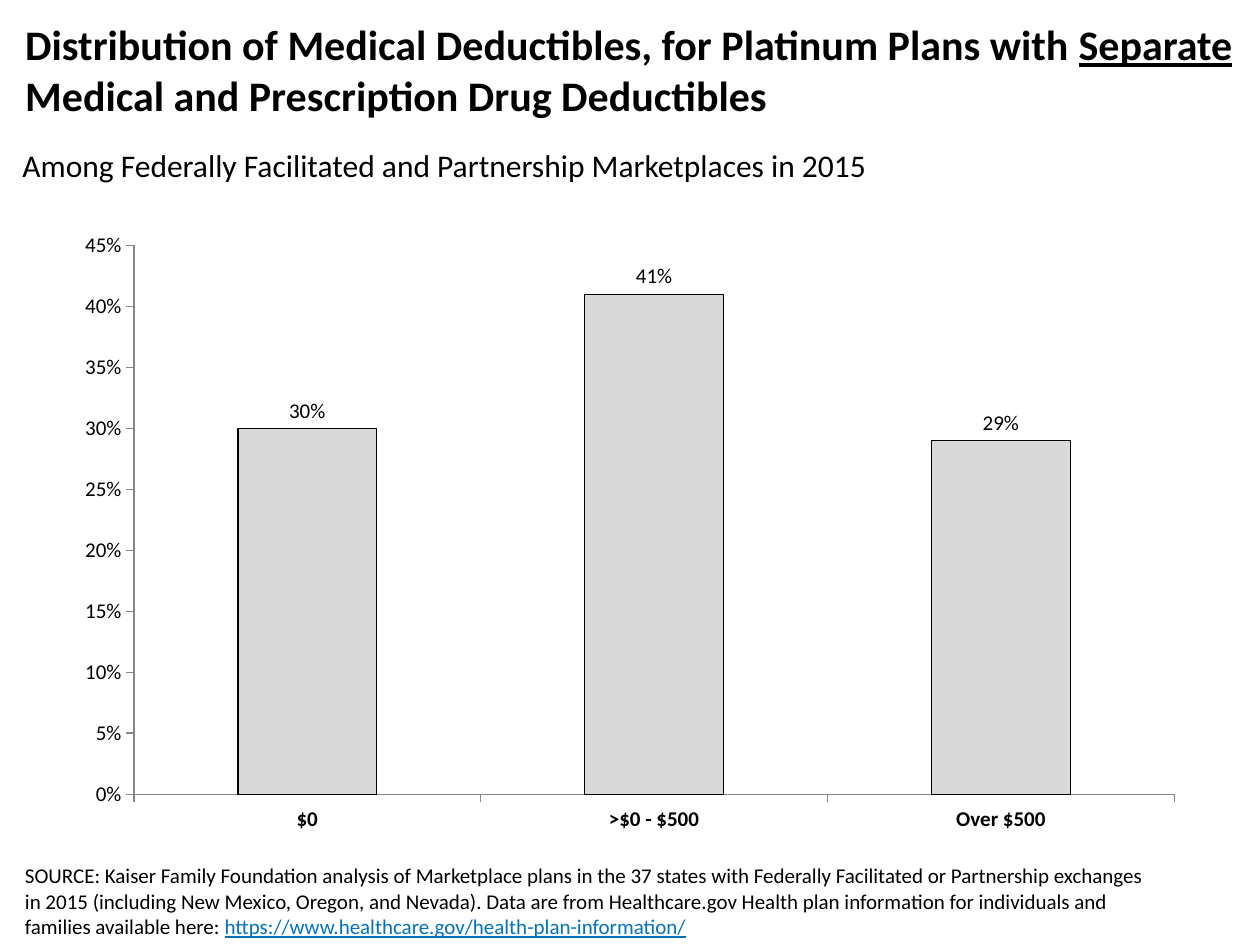
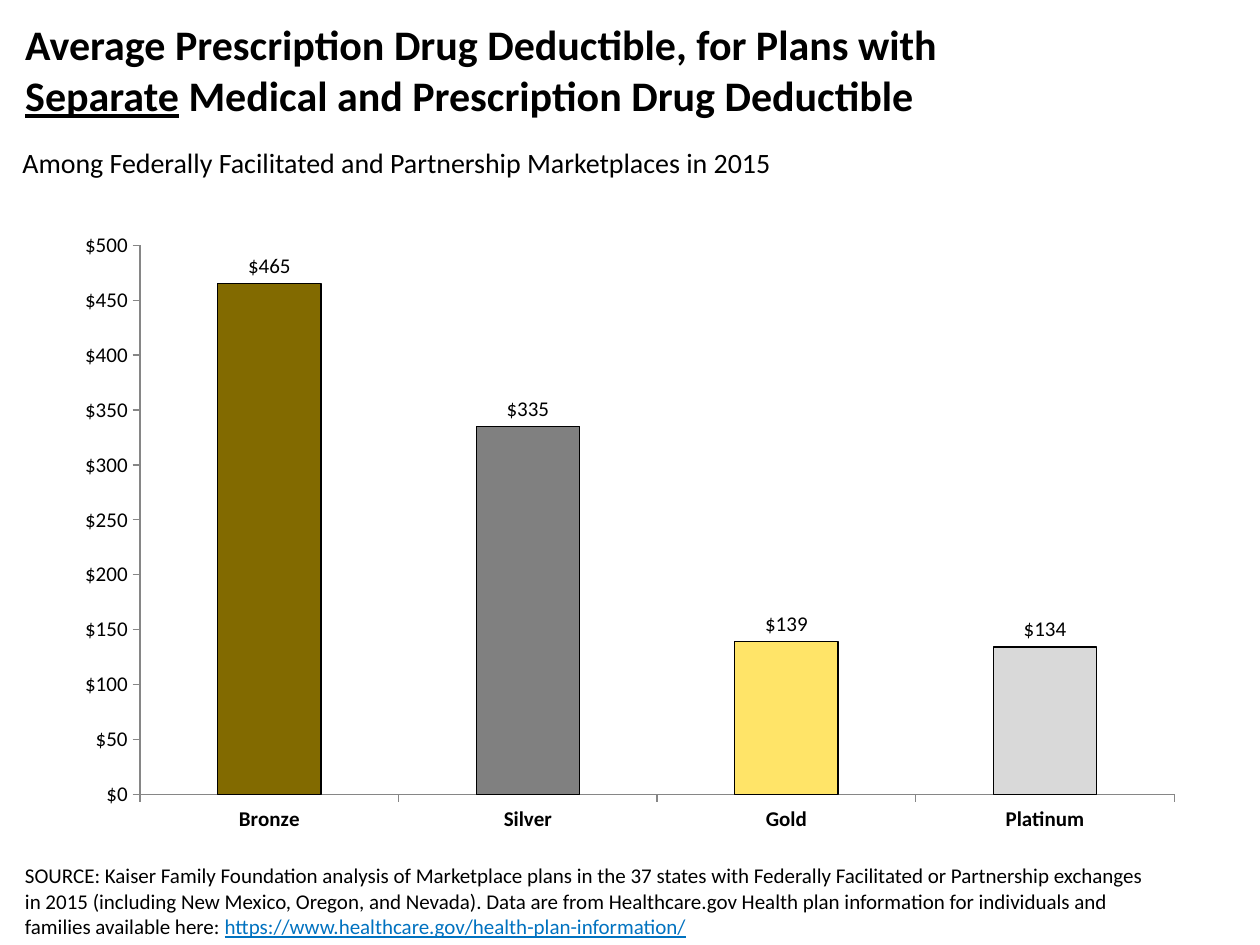
"""Build two slides of column charts on health plan deductibles."""
from dataclasses import dataclass

import pptx
import pptx.chart.data
import pptx.dml.color
import pptx.enum.chart
import pptx.enum.text
import pptx.oxml
import pptx.oxml.ns
import pptx.util

SUBTITLE = "Among Federally Facilitated and Partnership Marketplaces in 2015"
SOURCE = [
    ("SOURCE: Kaiser Family Foundation analysis of Marketplace plans in the 37 states with "
     "Federally Facilitated or Partnership exchanges in 2015 (including New Mexico, Oregon, "
     "and Nevada). Data are from Healthcare.gov Health plan information for individuals and "
     "families available here: ", False),
    ("https://www.healthcare.gov/health-plan-information/", True),
]
PAGES = [
    {
        "title": [("Distribution of Medical Deductibles, for Platinum Plans with ", False),
                  ("Separate", True),
                  (" Medical and Prescription Drug Deductibles", False)],
        "subtitle_size": 18,
        "bars": [("$0", 0.30, "D9D9D9"), (">$0 - $500", 0.41, "D9D9D9"),
                 ("Over $500", 0.29, "D9D9D9")],
        "number_format": "0%",
        "top": 0.45,
        "step": 0.05,
        "plot_left": 0.0625,
    },
    {
        "title": [("Average Prescription Drug Deductible, for Plans with\v", False),
                  ("Separate", True),
                  (" Medical and Prescription Drug Deductible", False)],
        "subtitle_size": 16,
        "bars": [("Bronze", 465, "826A00"), ("Silver", 335, "808080"),
                 ("Gold", 139, "FFE468"), ("Platinum", 134, "D9D9D9")],
        "number_format": '"$"#,##0',
        "top": 500,
        "step": 50,
        "plot_left": 0.068,
    },
]

COLUMNS, ROWS = 100, 75
TITLE_AREA = (1, 1, 98, 10)
SUBTITLE_AREA = (0.8, 11.1, 80, 4)
CHART_AREA = (5, 17.5, 90, 49.5)
SOURCE_AREA = (1, 68, 91, 6)
PLOT_RIGHT, PLOT_TOP, PLOT_HEIGHT = 0.98, 0.04, 0.88


@dataclass(frozen=True)
class Theme:
    """Hold the colours and type sizes of the slides."""
    font: str = "Calibri"
    ink: str = "000000"
    link: str = "0072C0"
    axis: str = "868686"
    title: int = 24
    small: int = 12
    outline: float = 0.75


THEME = Theme()
deck = pptx.Presentation()
deck.slide_width, deck.slide_height = pptx.util.Inches(10), pptx.util.Inches(7.5)


def place(area):
    """Turn grid columns and rows into slide lengths."""
    column, row = deck.slide_width / COLUMNS, deck.slide_height / ROWS
    return [round(count * unit) for count, unit in zip(area, (column, row, column, row))]


def rgb(colour):
    """Return a colour object for a hex string."""
    return pptx.dml.color.RGBColor.from_string(colour)


def style(font, size, colour=THEME.ink, bold=False):
    """Apply the shared typeface with a size, colour and weight."""
    font.name, font.size, font.bold = THEME.font, pptx.util.Pt(size), bold
    font.color.rgb = rgb(colour)


def write(holder, area, pieces, size, bold=False, marked=THEME.ink):
    """Place a text holder and fill it with plain and underlined pieces."""
    holder.left, holder.top, holder.width, holder.height = place(area)
    frame = holder.text_frame
    frame.word_wrap = True
    frame.auto_size = pptx.enum.text.MSO_AUTO_SIZE.NONE
    frame.vertical_anchor = pptx.enum.text.MSO_ANCHOR.TOP
    paragraph = frame.paragraphs[0]
    paragraph.alignment = pptx.enum.text.PP_ALIGN.LEFT
    paragraph.text = pieces[0][0]
    for words, _ in pieces[1:]:
        paragraph.add_run().text = words
    for run, (_, underlined) in zip(paragraph.runs, pieces):
        style(run.font, size, marked if underlined else THEME.ink, bold)
        run.font.underline = underlined
    paragraph.font.size = pptx.util.Pt(size)


def fix_plot(chart, left):
    """Pin the inner plot area to shares of the chart."""
    plot_area = chart.plots[0]._element.getparent()
    for old in plot_area.findall(pptx.oxml.ns.qn("c:layout")):
        plot_area.remove(old)
    shares = {"x": left, "y": PLOT_TOP, "w": PLOT_RIGHT - left, "h": PLOT_HEIGHT}
    modes = "".join(f'<c:{key}Mode val="edge"/>' for key in "xy")
    sizes = "".join(f'<c:{key} val="{share:.4f}"/>' for key, share in shares.items())
    plot_area.insert(0, pptx.oxml.parse_xml(
        f'<c:layout {pptx.oxml.ns.nsdecls("c")}><c:manualLayout>'
        f'<c:layoutTarget val="inner"/>{modes}{sizes}</c:manualLayout></c:layout>'))


def draw_bars(slide, page):
    """Add the column chart of a page."""
    names, values, colours = zip(*page["bars"])
    numbers = pptx.chart.data.CategoryChartData(number_format=page["number_format"])
    numbers.categories = names
    numbers.add_series("Series 1", values)
    chart = slide.shapes.add_chart(pptx.enum.chart.XL_CHART_TYPE.COLUMN_CLUSTERED,
                                   *place(CHART_AREA), numbers).chart
    chart.has_legend = chart.has_title = False
    style(chart.font, THEME.small)
    fix_plot(chart, page["plot_left"])

    for axis, bold in ((chart.category_axis, True), (chart.value_axis, False)):
        axis.has_major_gridlines = False
        axis.major_tick_mark = pptx.enum.chart.XL_TICK_MARK.OUTSIDE
        axis.minor_tick_mark = pptx.enum.chart.XL_TICK_MARK.NONE
        axis.format.line.color.rgb = rgb(THEME.axis)
        axis.format.line.width = pptx.util.Pt(THEME.outline)
        style(axis.tick_labels.font, THEME.small, bold=bold)
    scale = chart.value_axis
    scale.minimum_scale, scale.maximum_scale, scale.major_unit = 0, page["top"], page["step"]

    plot = chart.plots[0]
    plot.gap_width, plot.vary_by_categories, plot.has_data_labels = 150, False, True
    labels = plot.data_labels
    labels.show_value = True
    labels.position = pptx.enum.chart.XL_LABEL_POSITION.OUTSIDE_END
    style(labels.font, THEME.small)
    for numbered in (labels, scale.tick_labels):
        numbered.number_format = page["number_format"]
        numbered.number_format_is_linked = False

    for index, colour in enumerate(colours):
        bar = plot.series[0].points[index].format
        bar.fill.solid()
        bar.fill.fore_color.rgb = rgb(colour)
        bar.line.color.rgb = rgb(THEME.ink)
        bar.line.width = pptx.util.Pt(THEME.outline)


def build(page):
    """Add one slide with its title, chart, subtitle and source."""
    slide = deck.slides.add_slide(deck.slide_layouts.get_by_name("Title Only"))
    write(slide.shapes.title, TITLE_AREA, page["title"], THEME.title, bold=True)
    draw_bars(slide, page)
    for area, pieces, size in ((SUBTITLE_AREA, [(SUBTITLE, False)], page["subtitle_size"]),
                               (SOURCE_AREA, SOURCE, THEME.small)):
        write(slide.shapes.add_textbox(*place(area)), area, pieces, size, marked=THEME.link)


def main():
    """Build every page and save the deck."""
    for page in PAGES:
        build(page)
    deck.save("out.pptx")


if __name__ == "__main__":
    main()
